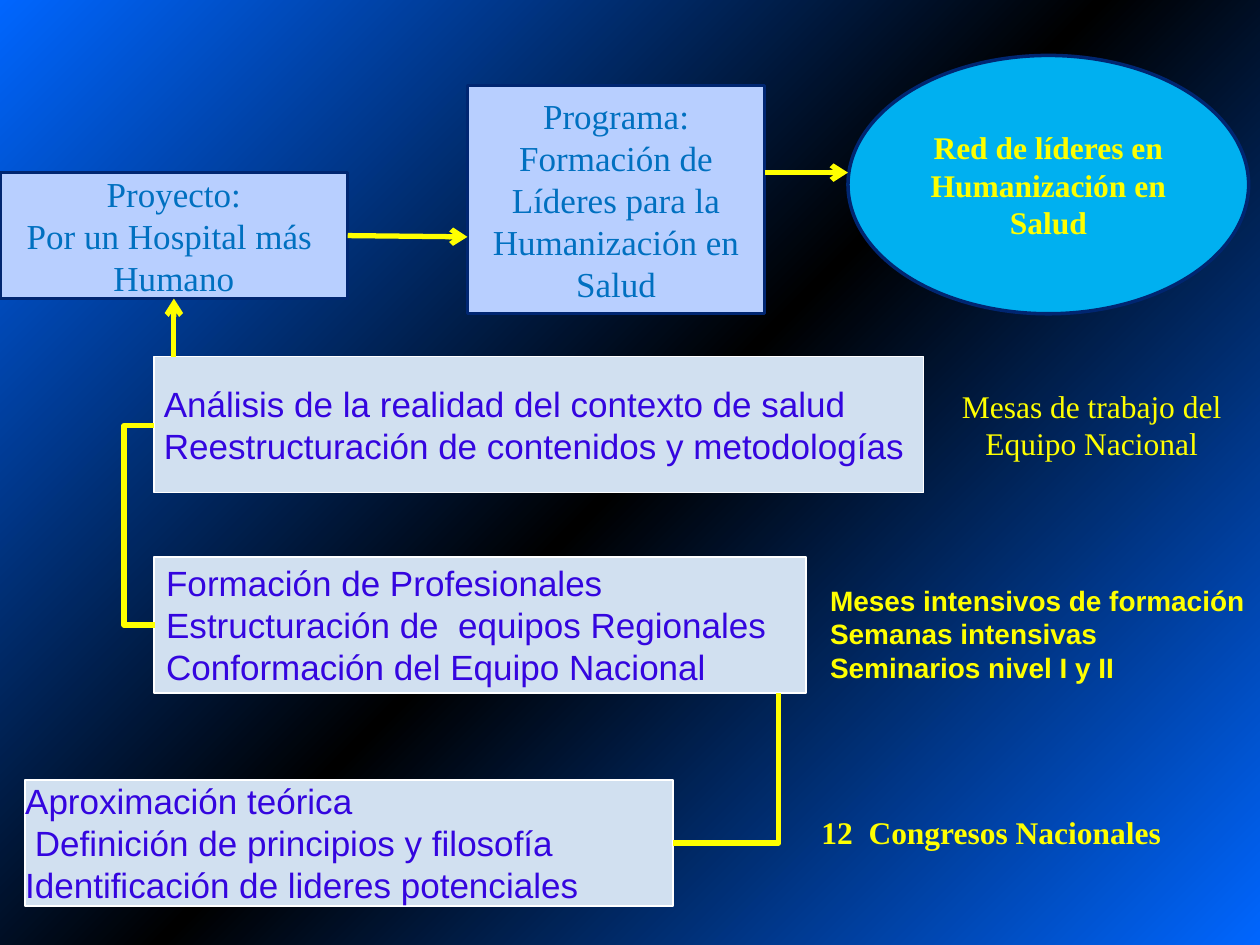
from copy import deepcopy
from dataclasses import dataclass

from lxml import etree
from pptx import Presentation
from pptx.dml.color import RGBColor
from pptx.enum.shapes import MSO_CONNECTOR, MSO_SHAPE
from pptx.enum.text import MSO_ANCHOR, PP_ALIGN
from pptx.oxml.ns import qn
from pptx.util import Inches, Pt

RECT, ELLIPSE = MSO_SHAPE.RECTANGLE, MSO_SHAPE.OVAL
STRAIGHT, ELBOW = MSO_CONNECTOR.STRAIGHT, MSO_CONNECTOR.ELBOW
LEFT, CENTER = PP_ALIGN.LEFT, PP_ALIGN.CENTER
TOP, MIDDLE = MSO_ANCHOR.TOP, MSO_ANCHOR.MIDDLE
BOTTOM_SIDE, RIGHT_SIDE = 2, 3
BLANK_LAYOUT = 6


@dataclass(frozen=True)
class Theme:
    glow: str = "0066FF"
    night: str = "000000"
    yellow: str = "FFFF00"
    stage_fill: str = "D1E0F0"
    stage_line: str = "FFFFFF"
    stage_text: str = "3405DF"
    goal_fill: str = "B8CFFF"
    goal_line: str = "002671"
    goal_text: str = "0070C0"
    network_fill: str = "00B0F0"
    sans: str = "Arial"
    serif: str = "Times New Roman"
    large: int = 20
    medium: int = 18
    small: int = 16
    arrow_width: int = 3


THEME = Theme()
STAGE_FONT = {"name": THEME.sans, "size": Pt(THEME.large), "color": THEME.stage_text}
GOAL_FONT = {"name": THEME.serif, "size": Pt(THEME.large), "color": THEME.goal_text}
NOTE_FONT = {"name": THEME.serif, "size": Pt(THEME.medium), "color": THEME.yellow}
STRONG_FONT = {**NOTE_FONT, "bold": True}
SMALL_FONT = {**STRONG_FONT, "name": THEME.sans, "size": Pt(THEME.small)}

STAGE_LOOK = {"fill": THEME.stage_fill, "line": THEME.stage_line, "width": 1}
GOAL_LOOK = {"fill": THEME.goal_fill, "line": THEME.goal_line, "width": 2}
NETWORK_LOOK = {**GOAL_LOOK, "fill": THEME.network_fill}


def rgb(value):
    return RGBColor.from_string(value)


def paint_background(page):
    """Diagonal gradient: bright corners with a dark band between them."""
    fill = page.background.fill
    fill.gradient()
    fill.gradient_angle = 315
    for stop, color, position in zip(fill.gradient_stops, (THEME.glow, THEME.night), (0, 0.5)):
        stop.color.rgb = rgb(color)
        stop.position = position
    stops = page._element.find(".//" + qn("a:gsLst"))
    last = deepcopy(stops[0])
    last.set("pos", "100000")
    stops.append(last)


def write_text(shape, lines, font, align, anchor, inset=0.1):
    frame = shape.text_frame
    frame.word_wrap = True
    frame.vertical_anchor = anchor
    frame.margin_left = Inches(inset)
    for index, line in enumerate(lines):
        para = frame.add_paragraph() if index else frame.paragraphs[0]
        para.alignment = align
        span = para.add_run()
        span.text = line
        for key, value in font.items():
            if key == "color":
                span.font.color.rgb = rgb(value)
            else:
                setattr(span.font, key, value)


def add_box(page, kind, at, look, lines, font, align=CENTER, inset=0.1):
    box = page.shapes.add_shape(kind, *map(Inches, at))
    box.shadow.inherit = False
    box.fill.solid()
    box.fill.fore_color.rgb = rgb(look["fill"])
    box.line.color.rgb = rgb(look["line"])
    box.line.width = Pt(look["width"])
    write_text(box, lines, font, align, MIDDLE, inset)
    return box


def add_note(page, at, lines, font, align=LEFT):
    note = page.shapes.add_textbox(*map(Inches, at))
    write_text(note, lines, font, align, TOP)


def add_link(page, kind, start, end):
    link = page.shapes.add_connector(kind, *map(Inches, start + end))
    link.line.color.rgb = rgb(THEME.yellow)
    link.line.width = Pt(THEME.arrow_width)
    etree.SubElement(link._element.spPr, qn("a:effectLst"))
    return link


def add_arrow(page, start, end):
    arrow = add_link(page, STRAIGHT, start, end)
    etree.SubElement(arrow.line._get_or_add_ln(), qn("a:tailEnd"), type="arrow")
    return arrow


def add_corner(page, start, end):
    """Link with a single bend."""
    corner = add_link(page, ELBOW, start, end)
    corner._element.spPr.find(qn("a:prstGeom")).set("prst", "bentConnector2")
    return corner


def add_bracket(page, start, end, reach):
    """Link with two bends, its middle part standing reach inches left of start."""
    bracket = add_link(page, ELBOW, start, end)
    share = round(reach / (start[0] - end[0]) * 100000)
    guides = bracket._element.spPr.find(qn("a:prstGeom")).get_or_add_avLst()
    etree.SubElement(guides, qn("a:gd"), name="adj1", fmla=f"val {share}")


def main():
    deck = Presentation()
    deck.slide_width, deck.slide_height = Inches(10), Inches(7.5)
    page = deck.slides.add_slide(deck.slide_layouts[BLANK_LAYOUT])
    paint_background(page)

    add_box(page, RECT, (1.22, 2.83, 6.11, 1.08), STAGE_LOOK,
            ["Análisis de la realidad del contexto de salud",
             "Reestructuración de contenidos y metodologías"], STAGE_FONT, LEFT, 0.08)
    add_box(page, RECT, (1.22, 4.42, 5.18, 1.08), STAGE_LOOK,
            ["Formación de Profesionales", "Estructuración de  equipos Regionales",
             "Conformación del Equipo Nacional"], STAGE_FONT, LEFT)
    origins = add_box(page, RECT, (0.2, 6.19, 5.14, 1), STAGE_LOOK,
                      ["Aproximación teórica", " Definición de principios y filosofía",
                       "Identificación de lideres potenciales"], STAGE_FONT, LEFT, 0)

    add_corner(page, (5.34, 6.69), (6.18, 5.5)).begin_connect(origins, RIGHT_SIDE)
    add_bracket(page, (1.23, 4.96), (1.22, 3.38), 0.25)

    add_note(page, (6.42, 6.4, 3.08, 1.08), ["12  Congresos Nacionales"], STRONG_FONT)
    add_note(page, (6.49, 4.58, 3.5, 0.91),
             ["Meses intensivos de formación", "Semanas intensivas",
              "Seminarios nivel I y II"], SMALL_FONT)
    add_note(page, (7.33, 3.02, 2.67, 0.7),
             ["Mesas de trabajo del Equipo Nacional"], NOTE_FONT, CENTER)

    project = add_box(page, RECT, (0, 1.37, 2.76, 1), GOAL_LOOK,
                      ["Proyecto:", "Por un Hospital más  Humano"], GOAL_FONT)
    add_box(page, ELLIPSE, (6.73, 0.44, 3.18, 2.05), NETWORK_LOOK,
            ["Red de líderes en Humanización en Salud"], STRONG_FONT)
    add_box(page, RECT, (3.71, 0.68, 2.36, 1.81), GOAL_LOOK,
            ["Programa:", "Formación de Líderes para la Humanización en Salud"], GOAL_FONT)

    add_arrow(page, (2.76, 1.87), (3.71, 1.88)).begin_connect(project, RIGHT_SIDE)
    add_arrow(page, (6.07, 1.37), (6.73, 1.37))
    add_arrow(page, (1.38, 2.83), (1.38, 2.37)).end_connect(project, BOTTOM_SIDE)

    deck.save("out.pptx")


if __name__ == "__main__":
    main()
